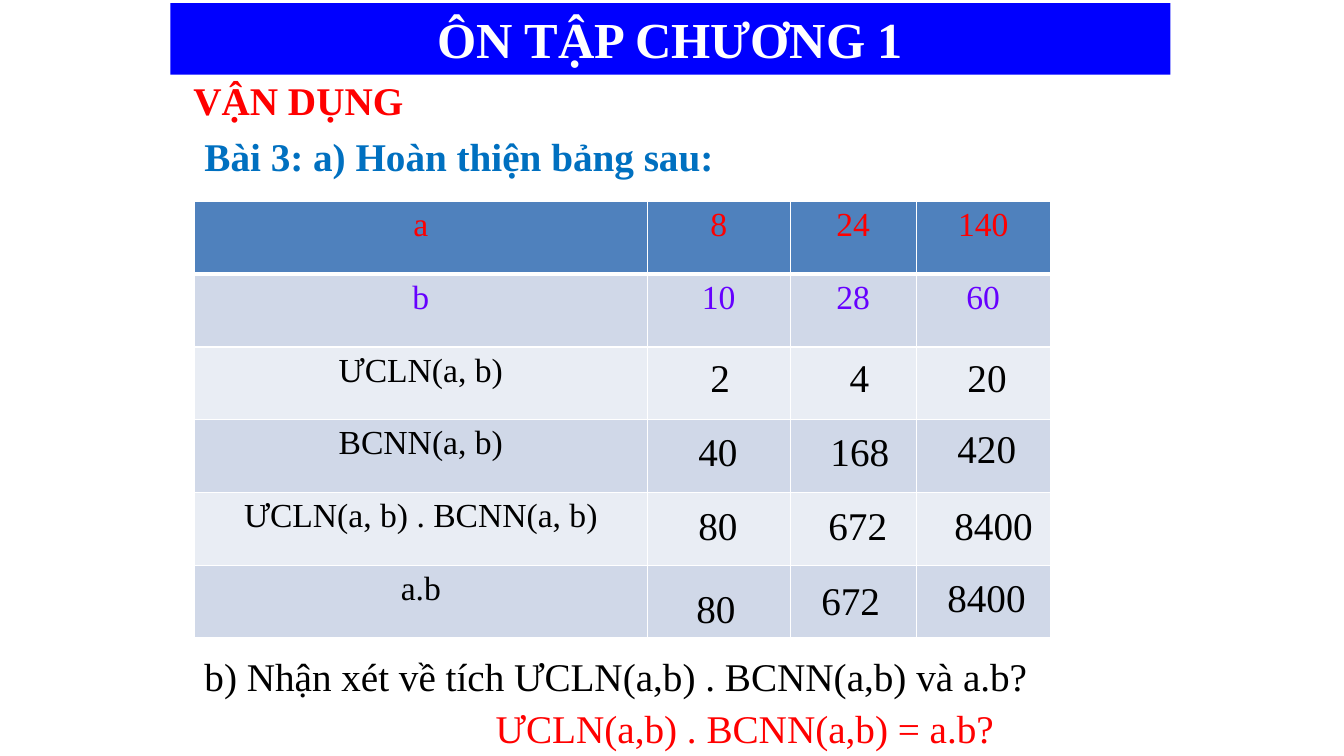
from dataclasses import dataclass

from lxml.etree import SubElement
from pptx import Presentation
from pptx.dml.color import RGBColor
from pptx.enum.shapes import MSO_SHAPE as Preset
from pptx.enum.text import MSO_ANCHOR as Anchor, MSO_AUTO_SIZE as AutoSize, PP_ALIGN as Align
from pptx.oxml.ns import qn
from pptx.slide import Slide
from pptx.table import _Cell as Cell
from pptx.text.text import _Paragraph as Paragraph
from pptx.util import Pt

EMU_PER_PX = 9144  # 100 px to the inch
FONT = "Times New Roman"
COLORS = {
    "white": "FFFFFF",
    "black": "000000",
    "banner": "0000FF",
    "red": "FF0000",
    "blue": "0070C0",
    "violet": "6600FF",
    "header": "4F81BD",
    "dark band": "D0D8E8",
    "light band": "E9EDF4",
}


@dataclass(frozen=True)
class Label:
    text: str
    left: int
    top: int
    width: int
    color: str = "black"
    bold: bool = False


@dataclass(frozen=True)
class TableRow:
    texts: tuple[str, ...]
    color: str
    fill: str


@dataclass(frozen=True)
class AnswerColumn:
    texts: tuple[str, ...]
    lefts: tuple[int, ...]
    tops: tuple[int, ...]
    widths: tuple[int, ...]


LABELS = [
    Label("VẬN DỤNG", 182, 71, 231, "red", True),
    Label("Bài 3: a) Hoàn thiện bảng sau:", 193, 126, 531, "blue", True),
    Label("b) Nhận xét về tích ƯCLN(a,b) . BCNN(a,b) và a.b?", 193, 642, 845),
    Label("ƯCLN(a,b) . BCNN(a,b) = a.b?", 482, 694, 520, "red"),
]

COLUMN_WIDTHS = (449, 142, 125, 133)
ROW_HEIGHT = 72.2
TABLE_ROWS = [
    TableRow(("a", "8", "24", "140"), "red", "header"),
    TableRow(("b", "10", "28", "60"), "violet", "dark band"),
    TableRow(("ƯCLN(a, b)",), "black", "light band"),
    TableRow(("BCNN(a, b)",), "black", "dark band"),
    TableRow(("ƯCLN(a, b) . BCNN(a, b)",), "black", "light band"),
    TableRow(("a.b",), "black", "dark band"),
]

ANSWERS = [
    AnswerColumn(("2", "40", "80", "80"), (695, 683, 683, 681), (346, 419, 492, 575), (40, 59, 59, 59)),
    AnswerColumn(("4", "168", "672", "672"), (833, 814, 812, 805), (346, 419, 492, 567), (40, 79, 79, 79)),
    AnswerColumn(("20", "420", "8400", "8400"), (950, 940, 937, 930), (346, 416, 492, 564), (60, 79, 99, 99)),
]


def px(length: float) -> int:
    return round(length * EMU_PER_PX)


def rgb(name: str) -> RGBColor:
    return RGBColor.from_string(COLORS[name])


def add_run(paragraph: Paragraph, text: str, size: int, color: str, bold: bool = False) -> None:
    run = paragraph.add_run()
    run.text = text
    run.font.name = FONT
    run.font.size = Pt(size)
    run.font.bold = bold
    run.font.color.rgb = rgb(color)


def add_banner(slide: Slide, text: str) -> None:
    banner = slide.shapes.add_shape(Preset.RECTANGLE, px(169), px(3), px(992), px(71))
    banner.shadow.inherit = False
    banner.fill.solid()
    banner.fill.fore_color.rgb = rgb("banner")
    banner.line.fill.background()
    frame = banner.text_frame
    frame.word_wrap = True
    frame.vertical_anchor = Anchor.TOP
    paragraph = frame.paragraphs[0]
    paragraph.alignment = Align.CENTER
    add_run(paragraph, text, 36, "white", True)


def add_label(slide: Slide, label: Label) -> None:
    box = slide.shapes.add_textbox(px(label.left), px(label.top), px(label.width), px(57))
    frame = box.text_frame
    frame.word_wrap = False
    frame.auto_size = AutoSize.SHAPE_TO_FIT_TEXT
    add_run(frame.paragraphs[0], label.text, 28, label.color, label.bold)


def add_border(cell: Cell, side: str, points: int) -> None:
    properties = cell._tc.get_or_add_tcPr()
    line = SubElement(properties, qn(f"a:ln{side}"), w=str(Pt(points)))
    fill = SubElement(line, qn("a:solidFill"))
    SubElement(fill, qn("a:srgbClr"), val=COLORS["white"])


def add_exercise_table(slide: Slide) -> None:
    frame = slide.shapes.add_table(
        len(TABLE_ROWS), len(COLUMN_WIDTHS), px(193), px(200),
        px(sum(COLUMN_WIDTHS)), px(ROW_HEIGHT * len(TABLE_ROWS)),
    )
    table = frame.table
    table.first_row = False
    table.horz_banding = False
    for column, width in zip(table.columns, COLUMN_WIDTHS):
        column.width = px(width)

    for row_index, row in enumerate(TABLE_ROWS):
        table.rows[row_index].height = px(ROW_HEIGHT)
        for column_index in range(len(COLUMN_WIDTHS)):
            cell = table.cell(row_index, column_index)
            for side in "LRTB":
                below_header = (row_index, side) in ((0, "B"), (1, "T"))
                add_border(cell, side, 3 if below_header else 1)
            cell.fill.solid()
            cell.fill.fore_color.rgb = rgb(row.fill)
            if column_index < len(row.texts):
                paragraph = cell.text_frame.paragraphs[0]
                paragraph.alignment = Align.CENTER
                add_run(paragraph, row.texts[column_index], 24, row.color)


def main() -> None:
    presentation = Presentation()
    presentation.slide_width = px(1333.33)
    presentation.slide_height = px(750)
    slide = presentation.slides.add_slide(presentation.slide_layouts[6])

    # Heading, questions and conclusion
    add_banner(slide, "ÔN TẬP CHƯƠNG 1")
    for label in LABELS:
        add_label(slide, label)

    # Table with the answers laid over its empty cells
    add_exercise_table(slide)
    for column in ANSWERS:
        for text, left, top, width in zip(column.texts, column.lefts, column.tops, column.widths):
            add_label(slide, Label(text, left, top, width))

    presentation.save("out.pptx")


if __name__ == "__main__":
    main()
